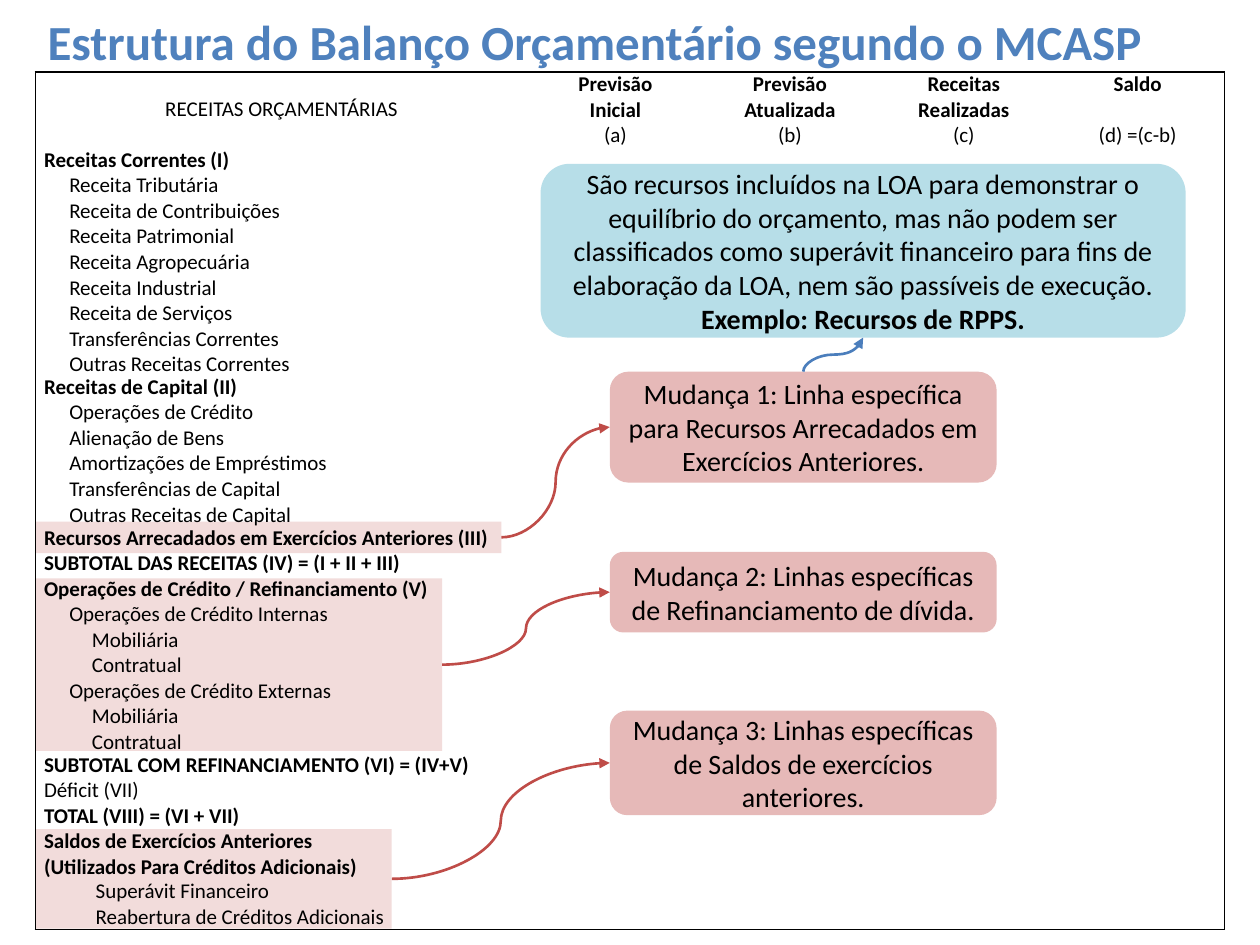
from lxml import etree
from pptx import Presentation
from pptx.dml.color import RGBColor
from pptx.enum import shapes, text
from pptx.oxml import ns
from pptx.util import Inches, Pt

BLACK = RGBColor(0x00, 0x00, 0x00)
TITLE_BLUE = RGBColor(0x4F, 0x81, 0xBD)
ARROW_BLUE = RGBColor(0x4B, 0x7E, 0xBC)
ARROW_RED = RGBColor(0xBF, 0x4C, 0x48)
PALE_PINK = RGBColor(0xF2, 0xDC, 0xDB)
PINK = RGBColor(0xE6, 0xB9, 0xB8)
PALE_BLUE = RGBColor(0xB7, 0xDE, 0xE8)

LEFT, CENTER = text.PP_ALIGN.LEFT, text.PP_ALIGN.CENTER
LINE_HEIGHT = 0.2
COLUMN_WIDTHS = [3.91, 1.39, 1.38, 1.38, 1.38]
HEADERS = [
    (["Previsão", "Inicial"], "(a)"),
    (["Previsão", "Atualizada"], "(b)"),
    (["Receitas", "Realizadas"], "(c)"),
    (["Saldo"], "(d) =(c-b)"),
]
REVENUE_ROWS = [
    (["Receitas Correntes (I)"], True, [0]),
    (["Receita Tributária", "Receita de Contribuições", "Receita Patrimonial",
      "Receita Agropecuária", "Receita Industrial", "Receita de Serviços",
      "Transferências Correntes", "Outras Receitas Correntes"], False, [0.2] * 8),
    (["Receitas de Capital (II)"], True, [0]),
    (["Operações de Crédito", "Alienação de Bens", "Amortizações de Empréstimos",
      "Transferências de Capital", "Outras Receitas de Capital"], False, [0.2] * 5),
    (["Recursos Arrecadados em Exercícios Anteriores (III)"], True, [0]),
    (["SUBTOTAL DAS RECEITAS (IV) = (I + II + III)"], True, [0]),
    (["Operações de Crédito / Refinanciamento (V)"], True, [0]),
    (["Operações de Crédito Internas", "Mobiliária", "Contratual",
      "Operações de Crédito Externas", "Mobiliária", "Contratual"],
     False, [0.2, 0.38, 0.38] * 2),
    (["SUBTOTAL COM REFINANCIAMENTO (VI) = (IV+V)"], True, [0]),
    (["Déficit (VII)"], False, [0]),
    (["TOTAL (VIII) = (VI + VII)"], True, [0]),
    (["Saldos de Exercícios Anteriores", "(Utilizados Para Créditos Adicionais)"],
     True, [0, 0]),
    (["Superávit Financeiro"], False, [0.41]),
    (["Reabertura de Créditos Adicionais"], False, [0.41]),
]
CHANGES = [
    ((0.28, 4.59, 3.23, 1.37), (4.84, 4.38, 3.07, 0.64),
     "Mudança 2: Linhas específicas de Refinanciamento de dívida."),
    ((0.28, 4.14, 3.7, 0.25), (4.84, 2.95, 3.07, 0.88),
     "Mudança 1: Linha específica para Recursos Arrecadados em Exercícios Anteriores."),
    ((0.28, 6.58, 2.83, 0.79), (4.84, 5.64, 3.07, 0.83),
     "Mudança 3: Linhas específicas de Saldos de exercícios anteriores."),
]
CALLOUT = [
    "São recursos incluídos na LOA para demonstrar o equilíbrio do orçamento, "
    "mas não podem ser classificados como superávit financeiro para fins de "
    "elaboração da LOA, nem são passíveis de execução.",
    "Exemplo: Recursos de RPPS.",
]


def write_text(frame, lines, size=12, color=BLACK, bold=(False,), align=LEFT, indents=(0,)):
    """Fill a text frame with one paragraph per line; short format lists repeat."""
    frame.word_wrap = True
    for index, line in enumerate(lines):
        paragraph = frame.paragraphs[0] if index == 0 else frame.add_paragraph()
        paragraph.alignment = align
        indent = indents[index % len(indents)]
        if indent:
            properties = paragraph._p.get_or_add_pPr()
            properties.set("marL", str(Inches(indent)))
            properties.set("indent", "0")
        run = paragraph.add_run()
        run.text = line
        run.font.name = "Calibri"
        run.font.size = Pt(size)
        run.font.bold = bold[index % len(bold)]
        run.font.color.rgb = color


def add_block(slide, box, kind, fill, lines=(), **text_format):
    """Add a filled, unlined shape with optional centred text."""
    shape = slide.shapes.add_shape(kind, *map(Inches, box))
    shape.shadow.inherit = False
    shape.fill.solid()
    shape.fill.fore_color.rgb = fill
    shape.line.fill.background()
    if lines:
        shape.text_frame.vertical_anchor = text.MSO_ANCHOR.MIDDLE
        write_text(shape.text_frame, lines, size=16, align=CENTER, **text_format)
    return shape


def add_curved_arrow(slide, source, source_site, target, target_site, color):
    """Join two shapes with a curved arrow."""
    connector = slide.shapes.add_connector(shapes.MSO_CONNECTOR.CURVE, 0, 0, 0, 0)
    connector.begin_connect(source, source_site)
    connector.end_connect(target, target_site)
    connector.line.color.rgb = color
    connector.line.width = Pt(1.5)
    tail = etree.SubElement(connector.line._get_or_add_ln(), ns.qn("a:tailEnd"))
    tail.set("type", "triangle")
    etree.SubElement(connector._element.spPr, ns.qn("a:effectLst"))
    return connector


def turn_upward(connector):
    """Turn a rising connector so that it leaves and arrives vertically."""
    width, height = connector.width, connector.height
    center_x = connector.left + width // 2
    center_y = connector.top + height // 2
    connector.left, connector.top = center_x - height // 2, center_y - width // 2
    connector.width, connector.height = height, width
    transform = connector._element.spPr.find(ns.qn("a:xfrm"))
    for name, value in (("rot", "5400000"), ("flipH", "1"), ("flipV", "1")):
        transform.set(name, value)


def add_change(slide, highlight_box, note_box, note):
    """Add a row highlight, its note and the arrow between them."""
    highlight = add_block(slide, highlight_box, shapes.MSO_SHAPE.RECTANGLE, PALE_PINK)
    note_shape = add_block(slide, note_box, shapes.MSO_SHAPE.ROUNDED_RECTANGLE, PINK, [note])
    add_curved_arrow(slide, highlight, 3, note_shape, 1, ARROW_RED)
    return note_shape


def add_title(slide, box):
    """Add the slide title."""
    frame = slide.shapes.add_textbox(*map(Inches, box)).text_frame
    frame.vertical_anchor = text.MSO_ANCHOR.MIDDLE
    write_text(frame, ["Estrutura do Balanço Orçamentário segundo o MCASP"],
               size=28, color=TITLE_BLUE, bold=[True])


def format_cell(cell, outer_sides):
    """Clear a cell's fill, set its margins and draw only its outer borders."""
    cell.margin_left = cell.margin_right = Inches(0.07)
    cell.margin_top = cell.margin_bottom = 0
    properties = cell._tc.get_or_add_tcPr()
    for side in "LRTB":
        line = etree.SubElement(properties, ns.qn(f"a:ln{side}"), w=str(Pt(1)))
        if side in outer_sides:
            fill = etree.SubElement(line, ns.qn("a:solidFill"))
            etree.SubElement(fill, ns.qn("a:srgbClr"), val=str(BLACK))
        else:
            etree.SubElement(line, ns.qn("a:noFill"))
    cell.fill.background()
    cell.text_frame.paragraphs[0].font.size = Pt(12)


def add_revenue_table(slide, box):
    """Add the revenue table with its two header rows."""
    line_counts = [2, 1] + [len(lines) for lines, _, _ in REVENUE_ROWS]
    last_row, last_column = len(line_counts) - 1, len(COLUMN_WIDTHS) - 1
    table = slide.shapes.add_table(last_row + 1, last_column + 1, *map(Inches, box)).table
    table.first_row = table.horz_banding = False
    for column, width in zip(table.columns, COLUMN_WIDTHS):
        column.width = Inches(width)
    for row_index, count in enumerate(line_counts):
        table.rows[row_index].height = Inches(LINE_HEIGHT * count)
        for column_index in range(last_column + 1):
            edges = {"L": column_index == 0, "R": column_index == last_column,
                     "T": row_index == 0, "B": row_index == last_row}
            format_cell(table.cell(row_index, column_index),
                        [side for side, outer in edges.items() if outer])
    corner = table.cell(0, 0)
    corner.merge(table.cell(1, 0))
    corner.vertical_anchor = text.MSO_ANCHOR.MIDDLE
    write_text(corner.text_frame, ["RECEITAS ORÇAMENTÁRIAS"], align=CENTER)
    for column_index, (names, formula) in enumerate(HEADERS, 1):
        write_text(table.cell(0, column_index).text_frame, names, bold=[True], align=CENTER)
        write_text(table.cell(1, column_index).text_frame, [formula], align=CENTER)
    for row_index, (lines, bold, indents) in enumerate(REVENUE_ROWS, 2):
        write_text(table.cell(row_index, 0).text_frame, lines, bold=[bold], indents=indents)


def main():
    """Build and save the slide."""
    presentation = Presentation()
    presentation.slide_width, presentation.slide_height = Inches(10), Inches(7.5)
    slide = presentation.slides.add_slide(presentation.slide_layouts[6])
    notes = [add_change(slide, *change) for change in CHANGES]
    callout = add_block(slide, (4.29, 1.3, 5.12, 1.38), shapes.MSO_SHAPE.ROUNDED_RECTANGLE,
                        PALE_BLUE, CALLOUT, bold=[False, True])
    turn_upward(add_curved_arrow(slide, notes[1], 0, callout, 2, ARROW_BLUE))
    add_title(slide, (0.28, -0.03, 9, 0.71))
    add_revenue_table(slide, (0.28, 0.57, 9.44, 6.8))
    presentation.save("out.pptx")


if __name__ == "__main__":
    main()
